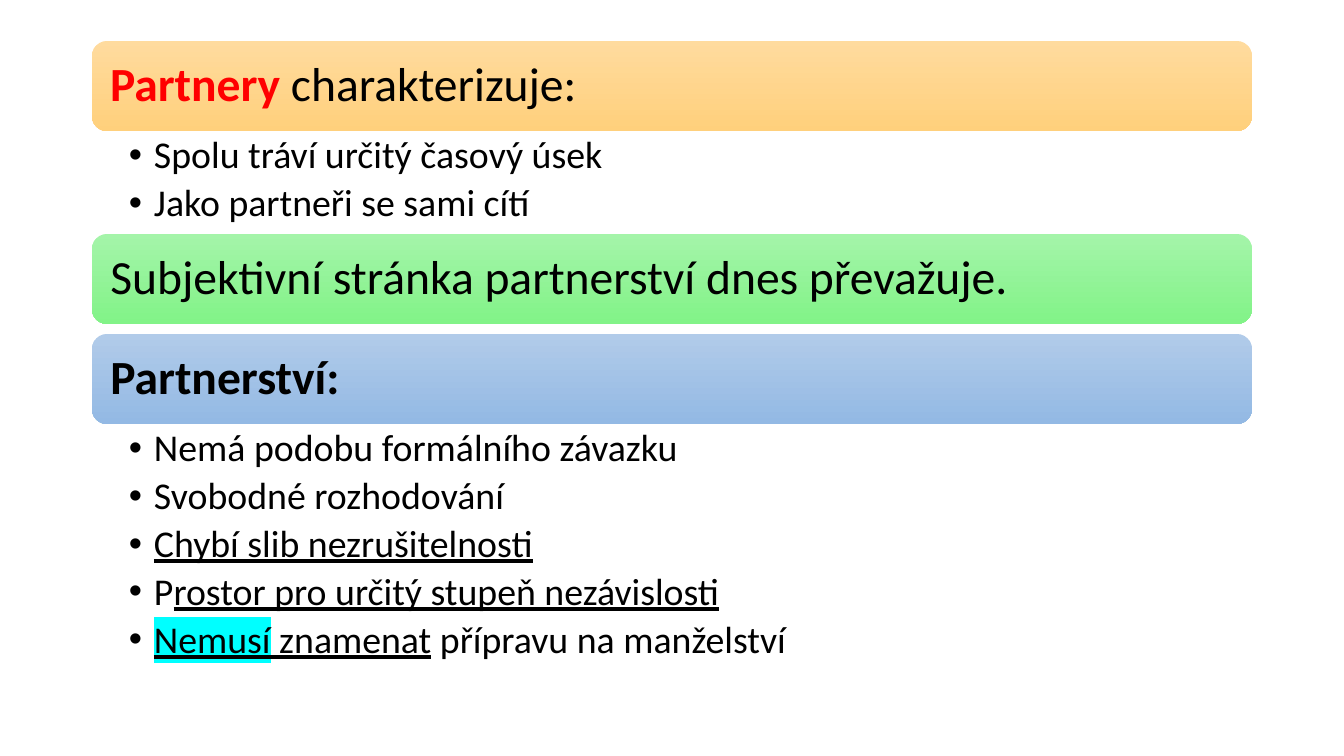
"""Build a slide with three heading bars and two bulleted lists about partnership."""
from lxml.etree import SubElement
from pptx import Presentation
from pptx.dml.color import RGBColor
from pptx.enum.shapes import MSO_SHAPE
from pptx.enum.text import MSO_ANCHOR, MSO_AUTO_SIZE, PP_ALIGN
from pptx.oxml.ns import qn
from pptx.util import Pt

PX = 914400 / 100.8
FONT = "Calibri"
COLORS = {
    "text": "000000",
    "accent": "FF0000",
    "mark": "00FFFF",
    "orange": ("FFDB9E", "FFD07C"),
    "green": ("A4F4A9", "82F388"),
    "blue": ("B1CBE9", "93B9E4"),
}

# Each run is (text, styles): bold, underline, accent, mark
BARS = [
    (41, "orange", [("Partnery", "bold accent"), (" charakterizuje:", "")]),
    (234, "green", [("Subjektivní stránka partnerství dnes převažuje.", "")]),
    (334, "blue", [("Partnerství:", "bold")]),
]
LISTS = [
    (131, 103, [
        [("Spolu tráví určitý časový úsek", "")],
        [("Jako partneři se sami cítí", "")],
    ]),
    (424, 256, [
        [("Nemá podobu formálního závazku", "")],
        [("Svobodné rozhodování", "")],
        [("Chybí slib nezrušitelnosti", "underline")],
        [("P", ""), ("rostor pro určitý stupeň nezávislosti", "underline")],
        [("Nemusí", "underline mark"), (" znamenat", "underline"),
         (" přípravu na manželství", "")],
    ]),
]
LEFT, WIDTH, BAR_H = 92, 1160, 90
CORNER, BAR_INSET = 4, 14
LIST_INSETS = (37, 5, 26, 5)
INDENT = 25


def px(n):
    return round(n * PX)


def place(sp, left, top, width, height):
    sp.left, sp.top, sp.width, sp.height = map(px, (left, top, width, height))


def set_frame(tf, insets, anchor):
    tf.word_wrap = True
    tf.auto_size = MSO_AUTO_SIZE.NONE
    tf.vertical_anchor = anchor
    tf.margin_left, tf.margin_top, tf.margin_right, tf.margin_bottom = map(px, insets)


def add_runs(p, runs, size):
    p.alignment = PP_ALIGN.LEFT
    p.line_spacing = 0.9
    p.space_before = Pt(0)
    for text, styles in runs:
        r = p.add_run()
        r.text = text
        r.font.size = Pt(size)
        r.font.bold = "bold" in styles
        r.font.underline = "underline" in styles
        color = COLORS["accent" if "accent" in styles else "text"]
        r.font.color.rgb = RGBColor.from_string(color)
        if "mark" in styles:
            highlight = SubElement(r._r.get_or_add_rPr(), qn("a:highlight"))
            SubElement(highlight, qn("a:srgbClr"), val=COLORS["mark"])
        r.font.name = FONT


def add_bar(s, top, color):
    bar = s.shapes.add_shape(MSO_SHAPE.ROUNDED_RECTANGLE, 0, 0, 0, 0)
    place(bar, LEFT, top, WIDTH, BAR_H)
    bar.shadow.inherit = False
    bar.line.fill.background()
    bar.fill.gradient()
    bar.fill.gradient_angle = 270
    for stop, value in zip(bar.fill.gradient_stops, COLORS[color]):
        stop.color.rgb = RGBColor.from_string(value)
    return bar


def fill_list(sp, top, height, items):
    place(sp, LEFT, top, WIDTH, height)
    tf = sp.text_frame
    set_frame(tf, LIST_INSETS, MSO_ANCHOR.TOP)
    for i, runs in enumerate(items):
        p = tf.add_paragraph() if i else tf.paragraphs[0]
        add_runs(p, runs, 27)
        p.space_after = Pt(5)
        pPr = p._p.get_or_add_pPr()
        pPr.set("marL", str(px(INDENT)))
        pPr.set("indent", str(px(-INDENT)))
        SubElement(pPr, qn("a:buChar"), char="•")


def main():
    prs = Presentation()
    prs.slide_width, prs.slide_height = px(1344), px(756)
    s = prs.slides.add_slide(prs.slide_layouts[3])
    title, *bodies = s.placeholders

    for i, (top, color, runs) in enumerate(BARS):
        sp = add_bar(s, top, color)
        if i == 0:
            title.element.addprevious(sp.element)
            sp = title
            place(sp, LEFT + CORNER, top + CORNER, WIDTH - 2 * CORNER, BAR_H - 2 * CORNER)
        set_frame(sp.text_frame, [BAR_INSET] * 4, MSO_ANCHOR.MIDDLE)
        add_runs(sp.text_frame.paragraphs[0], runs, 34)

    for sp, (top, height, items) in zip(bodies, LISTS):
        fill_list(sp, top, height, items)

    prs.save("out.pptx")


if __name__ == "__main__":
    main()
